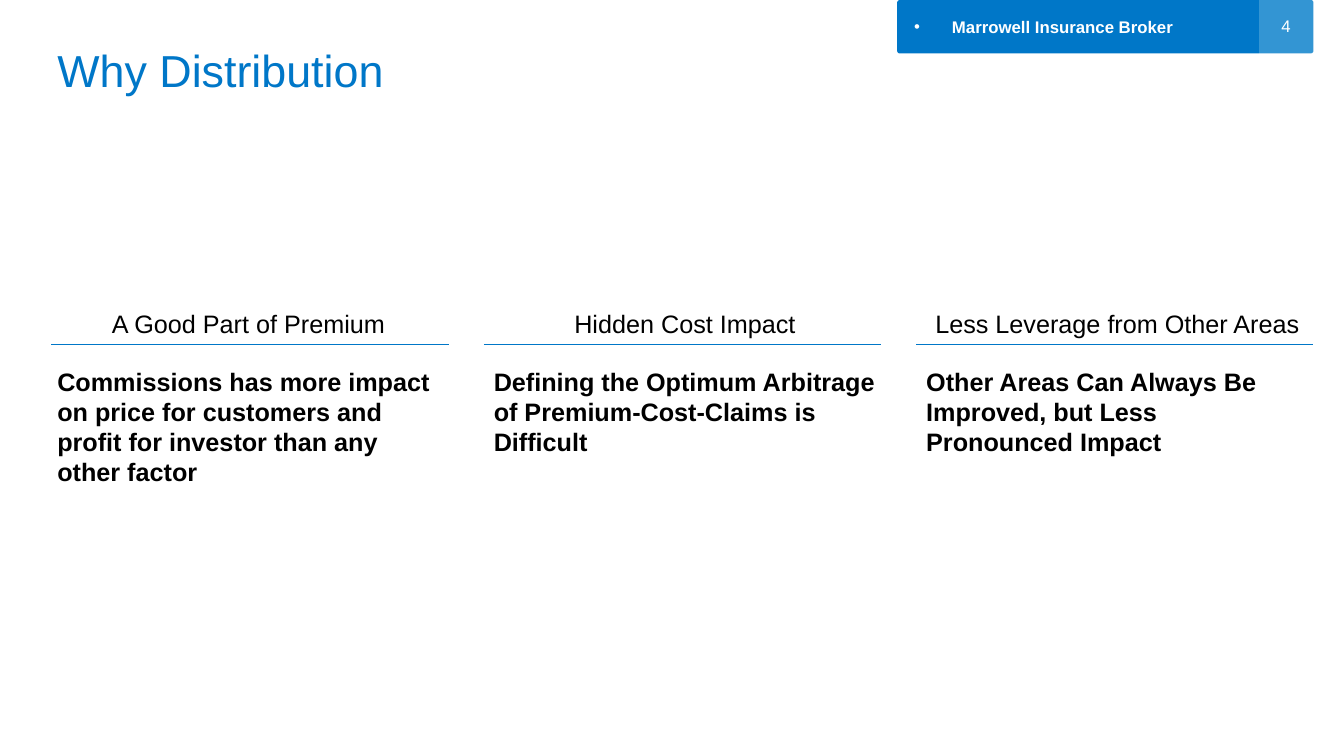
"""Build the "Why Distribution" slide with three headed columns."""
from dataclasses import dataclass

from lxml import etree
from pptx import Presentation
from pptx.dml.color import RGBColor
from pptx.enum.shapes import MSO_CONNECTOR, MSO_SHAPE
from pptx.enum.text import MSO_ANCHOR, MSO_AUTO_SIZE, PP_ALIGN
from pptx.oxml.ns import qn
from pptx.util import Pt

STRAIGHT = MSO_CONNECTOR.STRAIGHT
ROUNDED_TOP = MSO_SHAPE.ROUND_2_SAME_RECTANGLE
TOP, MIDDLE, BOTTOM = MSO_ANCHOR.TOP, MSO_ANCHOR.MIDDLE, MSO_ANCHOR.BOTTOM
LEFT, CENTER = PP_ALIGN.LEFT, PP_ALIGN.CENTER
NO_FIT = MSO_AUTO_SIZE.NONE

TITLE = "Why Distribution"
BROKER = "Marrowell Insurance Broker"
PAGE = "4"
COLUMNS = [
    ("A Good Part of Premium",
     "Commissions has more impact on price for customers and profit for "
     "investor than any other factor"),
    ("Hidden Cost Impact",
     "Defining the Optimum Arbitrage of Premium-Cost-Claims is Difficult"),
    ("Less Leverage from Other Areas",
     "Other Areas Can Always Be Improved, but Less Pronounced Impact"),
]


@dataclass(frozen=True)
class Theme:
    """Colours, font and type sizes of the slide."""
    blue: RGBColor = RGBColor(0x00, 0x77, 0xC8)
    light_blue: RGBColor = RGBColor(0x33, 0x95, 0xD3)
    white: RGBColor = RGBColor(0xFF, 0xFF, 0xFF)
    black: RGBColor = RGBColor(0x00, 0x00, 0x00)
    font: str = "Arial"
    title_size: int = 32
    column_size: int = 18
    header_size: int = 12


THEME = Theme()
TITLE_BOX = (33.84, 0, 607, 72.7)
BROKER_BOX = (645.8, 8.6, 249.8, 23)
PAGE_BOX = (900.7, 7.9, 36, 21.6)
BAR_LEFT, BAR_WIDTH, BAR_HEIGHT = 640.8, 258.5, 38.2
BADGE_WIDTH = 38.9
RULE_LEFT, RULE_PITCH, RULE_WIDTH, RULE_TOP = 36.7, 308.9, 283.7, 246.2
TEXT_LEFT, TEXT_WIDTH = 33.84, 287.3
HEADING_TOP, HEADING_HEIGHT = 216.7, 29.1
BODY_TOP, BODY_HEIGHT = 257.8, 116.6


def place(shape, box):
    """Move and size a shape."""
    shape.left, shape.top, shape.width, shape.height = map(Pt, box)


def write(shape, text, size, color, align=LEFT, bold=False, anchor=TOP):
    """Fill a shape with one formatted paragraph."""
    frame = shape.text_frame
    frame.text = text
    frame.word_wrap = True
    frame.auto_size = NO_FIT
    frame.vertical_anchor = anchor
    paragraph = frame.paragraphs[0]
    paragraph.alignment = align
    font = paragraph.font
    font.name, font.size, font.bold = THEME.font, Pt(size), bold
    font.color.rgb = color


def add_text(slide, box, *args, **style):
    """Add a formatted text box."""
    write(slide.shapes.add_textbox(*map(Pt, box)), *args, **style)


def add_header_block(slide, left, width, rotation, color):
    """Add a header block whose rounded end is turned sideways."""
    offset = (width - BAR_HEIGHT) / 2
    box = (left + offset, -offset, BAR_HEIGHT, width)
    shape = slide.shapes.add_shape(ROUNDED_TOP, *map(Pt, box))
    shape.rotation = rotation
    shape.adjustments[0] = 0.05
    shape.shadow.inherit = False
    shape.fill.solid()
    shape.fill.fore_color.rgb = color
    shape.line.fill.background()


def add_rule(slide, left):
    """Add the thin line under a column heading."""
    ends = (left, RULE_TOP, left + RULE_WIDTH, RULE_TOP)
    rule = slide.shapes.add_connector(STRAIGHT, *map(Pt, ends))
    rule.line.color.rgb = THEME.blue
    rule.line.width = Pt(0.5)
    etree.SubElement(rule._element.spPr, qn("a:effectLst"))


def add_header(slide):
    """Add the broker bar, page badge and title."""
    add_header_block(slide, BAR_LEFT, BAR_WIDTH, 270, THEME.blue)
    add_header_block(slide, BAR_LEFT + BAR_WIDTH, BADGE_WIDTH, 90,
                     THEME.light_blue)
    add_text(slide, PAGE_BOX, PAGE, THEME.header_size, THEME.white,
             align=CENTER)

    title, broker = slide.shapes.title, slide.placeholders[1]
    place(title, TITLE_BOX)
    write(title, TITLE, THEME.title_size, THEME.blue, anchor=BOTTOM)

    place(broker, BROKER_BOX)
    broker.text_frame.text = BROKER
    properties = broker.text_frame.paragraphs[0]._p.get_or_add_pPr()
    properties.set("marL", "0")
    properties.set("indent", "0")
    etree.SubElement(properties, qn("a:buNone"))
    write(broker, BROKER, THEME.header_size, THEME.white, bold=True,
          anchor=MIDDLE)
    paragraph = broker.text_frame.paragraphs[0]
    paragraph.space_before = Pt(0)
    paragraph.line_spacing = 0.9
    for shape in (broker, title):
        slide.shapes._spTree.append(shape._element)


def add_columns(slide):
    """Add the three headed columns."""
    for index, (heading, body) in enumerate(COLUMNS):
        rule_left = RULE_LEFT + index * RULE_PITCH
        text_left = rule_left if index else TEXT_LEFT
        add_rule(slide, rule_left)
        add_text(slide, (text_left, HEADING_TOP, TEXT_WIDTH, HEADING_HEIGHT),
                 heading, THEME.column_size, THEME.black, align=CENTER)
        add_text(slide, (text_left, BODY_TOP, TEXT_WIDTH, BODY_HEIGHT),
                 body, THEME.column_size, THEME.black, bold=True)


def main():
    """Create and save the presentation."""
    presentation = Presentation()
    presentation.slide_width, presentation.slide_height = Pt(960), Pt(540)
    slide = presentation.slides.add_slide(presentation.slide_layouts[1])
    add_header(slide)
    add_columns(slide)
    presentation.save("out.pptx")


if __name__ == "__main__":
    main()
